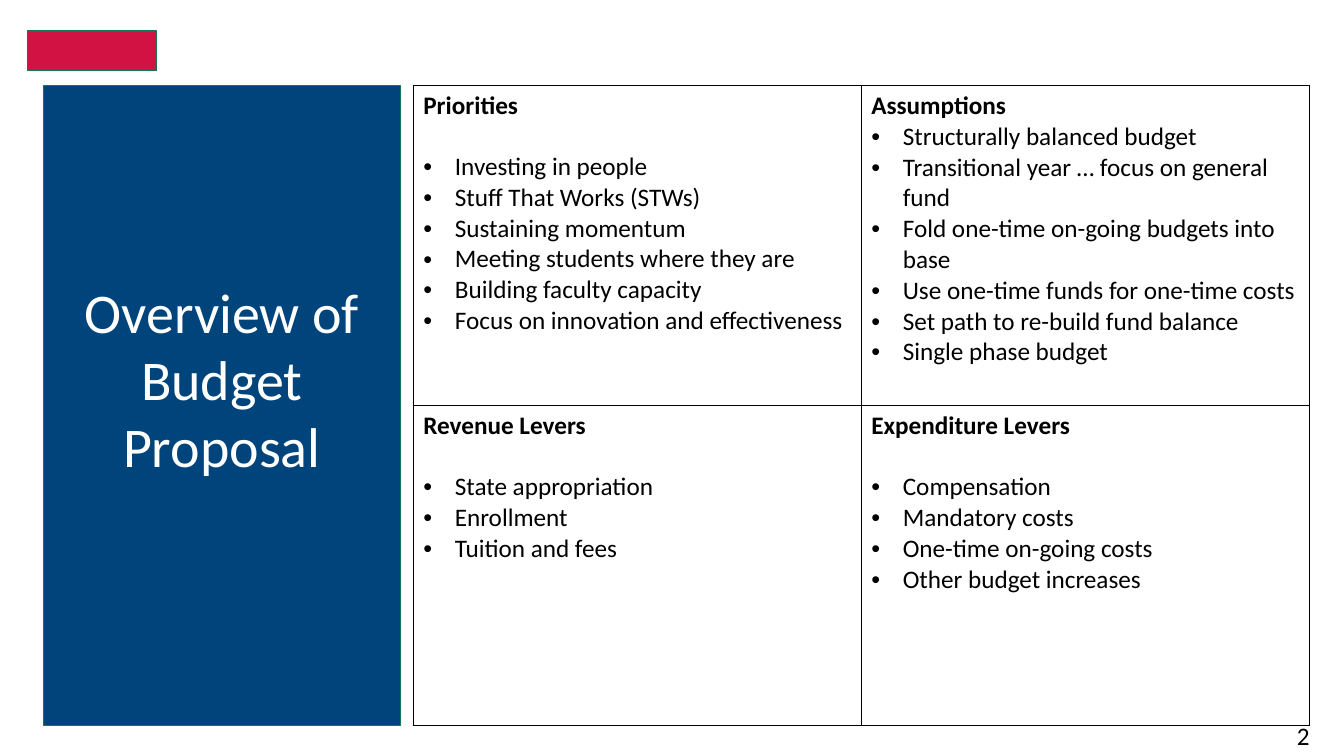
"""Build the budget proposal overview slide."""
from dataclasses import dataclass
from typing import Any

from lxml.etree import SubElement
from pptx import Presentation
from pptx.dml.color import RGBColor as RGB
from pptx.enum.shapes import MSO_SHAPE as SHAPE
from pptx.enum.text import MSO_ANCHOR as ANCHOR, MSO_AUTO_SIZE as AUTO, PP_ALIGN as ALIGN
from pptx.oxml.ns import qn
from pptx.util import Pt


@dataclass(frozen=True)
class Theme:
    """Colours, font and type sizes of the slide."""
    font: str = "Calibri"
    navy: str = "00447C"
    red: str = "D11242"
    green: str = "16745A"
    white: str = "FFFFFF"
    black: str = "000000"
    title_size: float = 40
    body_size: float = 18


@dataclass(frozen=True)
class Box:
    """A rectangle in points."""
    left: float
    top: float
    width: float
    height: float

    def emu(self) -> tuple:
        """Return the four lengths for python-pptx."""
        return Pt(self.left), Pt(self.top), Pt(self.width), Pt(self.height)


@dataclass(frozen=True)
class Quadrant:
    """One table cell: a heading, its bullets and the gap between them."""
    heading: str
    bullets: tuple[str, ...]
    gap: float = 21.6


THEME = Theme()
PANEL = Box(31, 61.2, 254.9, 457.2)
ACCENT = Box(19.8, 22.3, 92.2, 28.3)
GRID = Box(295.2, 61.2, 640, 457.2)
PAGE_NUMBER = Box(726.5, GRID.top + GRID.height, 216, 21.6)
INDENT = 22.5
QUADRANTS = (
    (
        Quadrant("Priorities", (
            "Investing in people", "Stuff That Works (STWs)", "Sustaining momentum",
            "Meeting students where they are", "Building faculty capacity",
            "Focus on innovation and effectiveness")),
        Quadrant("Assumptions", (
            "Structurally balanced budget", "Transitional year … focus on general fund",
            "Fold one-time on-going budgets into base", "Use one-time funds for one-time costs",
            "Set path to re-build fund balance", "Single phase budget"), gap=0),
    ),
    (
        Quadrant("Revenue Levers", ("State appropriation", "Enrollment", "Tuition and fees")),
        Quadrant("Expenditure Levers", (
            "Compensation", "Mandatory costs", "One-time on-going costs",
            "Other budget increases")),
    ),
)


def apply(target: Any, values: dict[str, Any]) -> None:
    """Set each attribute named in values."""
    for name, value in values.items():
        setattr(target, name, value)


def write(p: Any, text: str, size: float, color: str, bold: bool = False) -> None:
    """Add one formatted run to a paragraph."""
    r = p.add_run()
    r.text = text
    apply(r.font, {"name": THEME.font, "size": Pt(size), "bold": bold})
    r.font.color.rgb = RGB.from_string(color)


def paint(sp: Any, fill: str) -> None:
    """Give a shape a solid fill and the green outline."""
    sp.fill.solid()
    sp.fill.fore_color.rgb = RGB.from_string(fill)
    sp.line.color.rgb = RGB.from_string(THEME.green)
    sp.line.width = Pt(1)


def add_title(s: Any, text: str) -> None:
    """Turn the title placeholder into the side panel."""
    sp = s.shapes.title
    apply(sp, dict(zip(("left", "top", "width", "height"), PANEL.emu())))
    paint(sp, THEME.navy)
    tf = sp.text_frame
    apply(tf, {"word_wrap": True, "auto_size": AUTO.NONE,
               "vertical_anchor": ANCHOR.MIDDLE, "margin_bottom": Pt(43)})
    p = tf.paragraphs[0]
    p.alignment = ALIGN.CENTER
    write(p, text, THEME.title_size, THEME.white)


def add_accent(s: Any) -> None:
    """Draw the red bar above the panel."""
    sp = s.shapes.add_shape(SHAPE.RECTANGLE, *ACCENT.emu())
    sp.shadow.inherit = False
    paint(sp, THEME.red)


def add_page_number(s: Any, text: str) -> None:
    """Write the page number in the margin below the table."""
    tf = s.shapes.add_textbox(*PAGE_NUMBER.emu()).text_frame
    tf.word_wrap = True
    p = tf.paragraphs[0]
    apply(p, {"alignment": ALIGN.RIGHT, "line_spacing": Pt(14.2)})
    write(p, text, THEME.body_size, THEME.black)


def add_bullet(p: Any) -> None:
    """Give a paragraph a hanging bullet."""
    pPr = p._p.get_or_add_pPr()
    pPr.set("marL", str(Pt(INDENT)))
    pPr.set("indent", str(-Pt(INDENT)))
    SubElement(pPr, qn("a:buFont"), typeface="Arial")
    SubElement(pPr, qn("a:buChar"), char="•")


def add_borders(cell: Any) -> None:
    """Draw a one-point line on every side of a cell."""
    tcPr = cell._tc.get_or_add_tcPr()
    for i, side in enumerate(("lnL", "lnR", "lnT", "lnB")):
        ln = tcPr.makeelement(qn(f"a:{side}"), {"w": str(Pt(1))})
        SubElement(SubElement(ln, qn("a:solidFill")), qn("a:srgbClr"), val=THEME.black)
        tcPr.insert(i, ln)


def fill_cell(cell: Any, quadrant: Quadrant) -> None:
    """Write and format one quadrant."""
    cell.fill.solid()
    cell.fill.fore_color.rgb = RGB.from_string(THEME.white)
    add_borders(cell)
    tf = cell.text_frame
    p = tf.paragraphs[0]
    p.space_after = Pt(quadrant.gap)
    write(p, quadrant.heading, THEME.body_size, THEME.black, bold=True)
    for text in quadrant.bullets:
        p = tf.add_paragraph()
        add_bullet(p)
        write(p, text, THEME.body_size, THEME.black)


def add_grid(s: Any) -> None:
    """Draw the table of quadrants."""
    rows, cols = len(QUADRANTS), len(QUADRANTS[0])
    table = s.shapes.add_table(rows, cols, *GRID.emu()).table
    apply(table, {"first_row": False, "horz_banding": False})
    for i, row in enumerate(QUADRANTS):
        for j, quadrant in enumerate(row):
            fill_cell(table.cell(i, j), quadrant)


def main() -> None:
    """Build and save the slide."""
    prs = Presentation()
    apply(prs, {"slide_width": Pt(960), "slide_height": Pt(540)})
    s = prs.slides.add_slide(prs.slide_layouts[5])
    add_title(s, "Overview of Budget Proposal")
    add_accent(s)
    add_grid(s)
    add_page_number(s, "2")
    prs.save("out.pptx")


if __name__ == "__main__":
    main()
